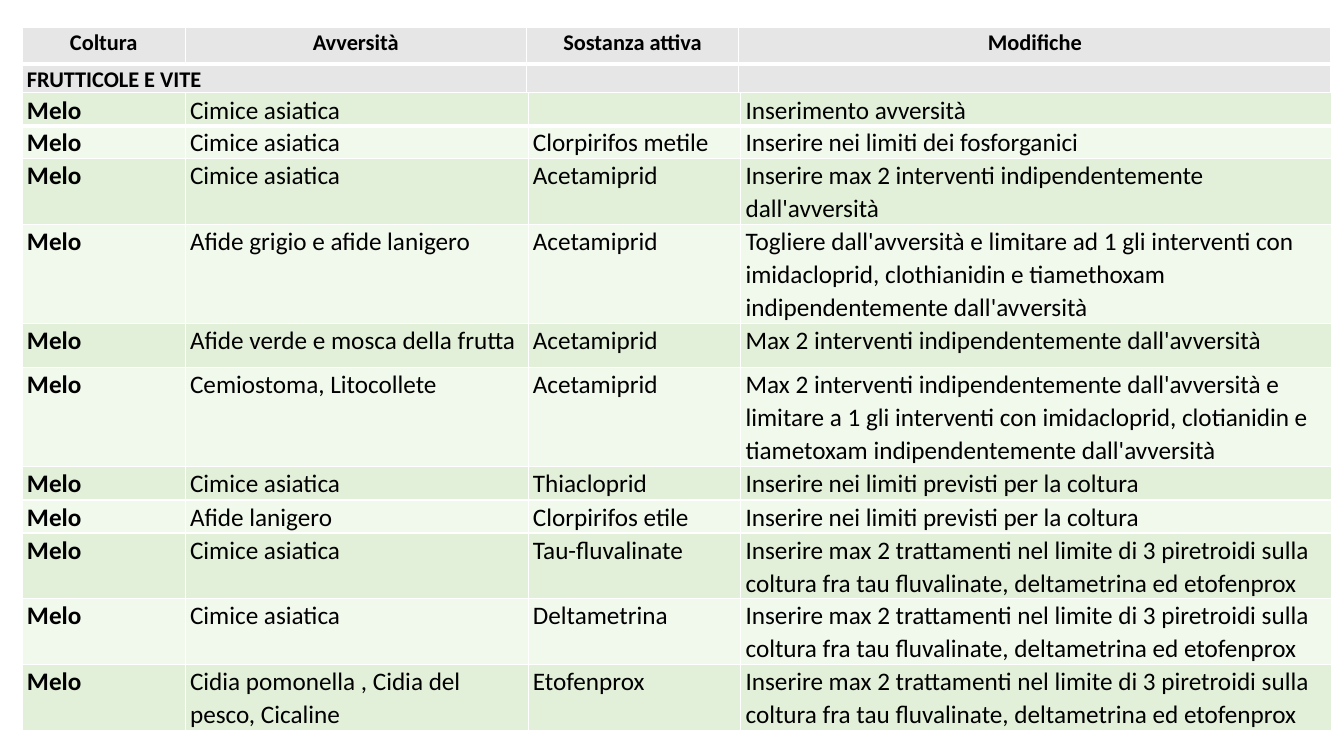
import pptx
import pptx.dml.color
import pptx.enum.text
import pptx.oxml
import pptx.oxml.ns
import pptx.util
from pptx.util import Cm

GREY, GREEN, PALE, WHITE, BLACK = "E7E6E6", "E2F0D9", "F1F8EC", "FFFFFF", "000000"
LEFT = 0.56
PYRE = ("Inserire max 2 trattamenti nel limite di 3 piretroidi sulla coltura "
        "fra tau fluvalinate, deltametrina ed etofenprox")
LIMIT = "Inserire nei limiti previsti per la coltura"
BUG = "Cimice asiatica"

TITLES = ["Coltura", "Avversità", "Sostanza attiva", "Modifiche"]
GROUP = ["FRUTTICOLE E VITE", "", "", ""]

# Row height in cm, pest, substance, change
CHANGES = [
    (0.82, BUG, "", "Inserimento avversità"),
    (0.83, BUG, "Clorpirifos metile", "Inserire nei limiti dei fosforganici"),
    (1.66, BUG, "Acetamiprid",
     "Inserire max 2 interventi indipendentemente dall'avversità"),
    (2.49, "Afide grigio e afide lanigero", "Acetamiprid",
     "Togliere dall'avversità e limitare ad 1 gli interventi con imidacloprid, "
     "clothianidin e tiamethoxam indipendentemente dall'avversità"),
    (1.11, "Afide verde e mosca della frutta", "Acetamiprid",
     "Max 2 interventi indipendentemente dall'avversità"),
    (2.49, "Cemiostoma, Litocollete", "Acetamiprid",
     "Max 2 interventi indipendentemente dall'avversità e limitare a 1 gli "
     "interventi con imidacloprid, clotianidin e tiametoxam "
     "indipendentemente dall'avversità"),
    (0.85, BUG, "Thiacloprid", LIMIT),
    (0.83, "Afide lanigero", "Clorpirifos etile", LIMIT),
    (1.66, BUG, "Tau-fluvalinate", PYRE),
    (1.66, BUG, "Deltametrina", PYRE),
    (1.66, "Cidia pomonella , Cidia del pesco, Cicaline", "Etofenprox", PYRE),
]


def color(code):
    return pptx.dml.color.RGBColor.from_string(code)


def border(cell, base):
    """Draw white edges; base is the width of the bottom one in points."""
    props = cell._tc.get_or_add_tcPr()
    for side, width in (("L", 1), ("R", 1), ("T", 1), ("B", base)):
        props.append(pptx.oxml.parse_xml(
            f'<a:ln{side} {pptx.oxml.ns.nsdecls("a")} w="{pptx.util.Pt(width)}">'
            f'<a:solidFill><a:srgbClr val="{WHITE}"/></a:solidFill></a:ln{side}>'))


def style(cell, text, size, bold, fill, base):
    border(cell, base)
    cell.fill.solid()
    cell.fill.fore_color.rgb = color(fill)
    cell.margin_left = cell.margin_right = Cm(0.12)
    cell.margin_top = cell.margin_bottom = 0
    cell.text = text
    line = cell.text_frame.paragraphs[0]
    line.line_spacing = 1.07
    font = line.font
    font.name, font.size, font.bold = "Calibri", pptx.util.Pt(size), bold
    font.color.rgb = color(BLACK)


def grid(slide, left, top, widths, heights):
    """Add a plain table with the given column widths and row heights."""
    table = slide.shapes.add_table(
        len(heights), len(widths), Cm(left), Cm(top),
        Cm(sum(widths)), Cm(sum(heights))).table
    table.first_row = table.horz_banding = False
    for col, width in zip(table.columns, widths):
        col.width = Cm(width)
    for row, height in zip(table.rows, heights):
        row.height = Cm(height)
    return table


def header(slide, left, top):
    table = grid(slide, left, top, [4.11, 8.59, 5.36, 14.92], [0.92, 0.73])
    for col, (title, group) in enumerate(zip(TITLES, GROUP)):
        head, part = table.cell(0, col), table.cell(1, col)
        style(head, title, 16, True, GREY, 3)
        head.text_frame.paragraphs[0].alignment = pptx.enum.text.PP_ALIGN.CENTER
        style(part, group, 16, True, GREY, 1)
        part.vertical_anchor = pptx.enum.text.MSO_ANCHOR.BOTTOM
    table.cell(1, 0).merge(table.cell(1, 1))


def body(slide, left, top):
    heights = [change[0] for change in CHANGES]
    table = grid(slide, left, top, [4.11, 8.64, 5.36, 14.88], heights)
    for row, change in enumerate(CHANGES):
        fill = PALE if row % 2 else GREEN
        for col, text in enumerate(("Melo",) + change[1:]):
            style(table.cell(row, col), text, 18, col == 0, fill,
                  1 if row else 3)


def main():
    deck = pptx.Presentation()
    deck.slide_width, deck.slide_height = Cm(33.87), Cm(19.05)
    slide = deck.slides.add_slide(deck.slide_layouts[6])
    header(slide, LEFT, 0.69)
    body(slide, LEFT, 2.34)
    deck.save("out.pptx")


if __name__ == "__main__":
    main()
